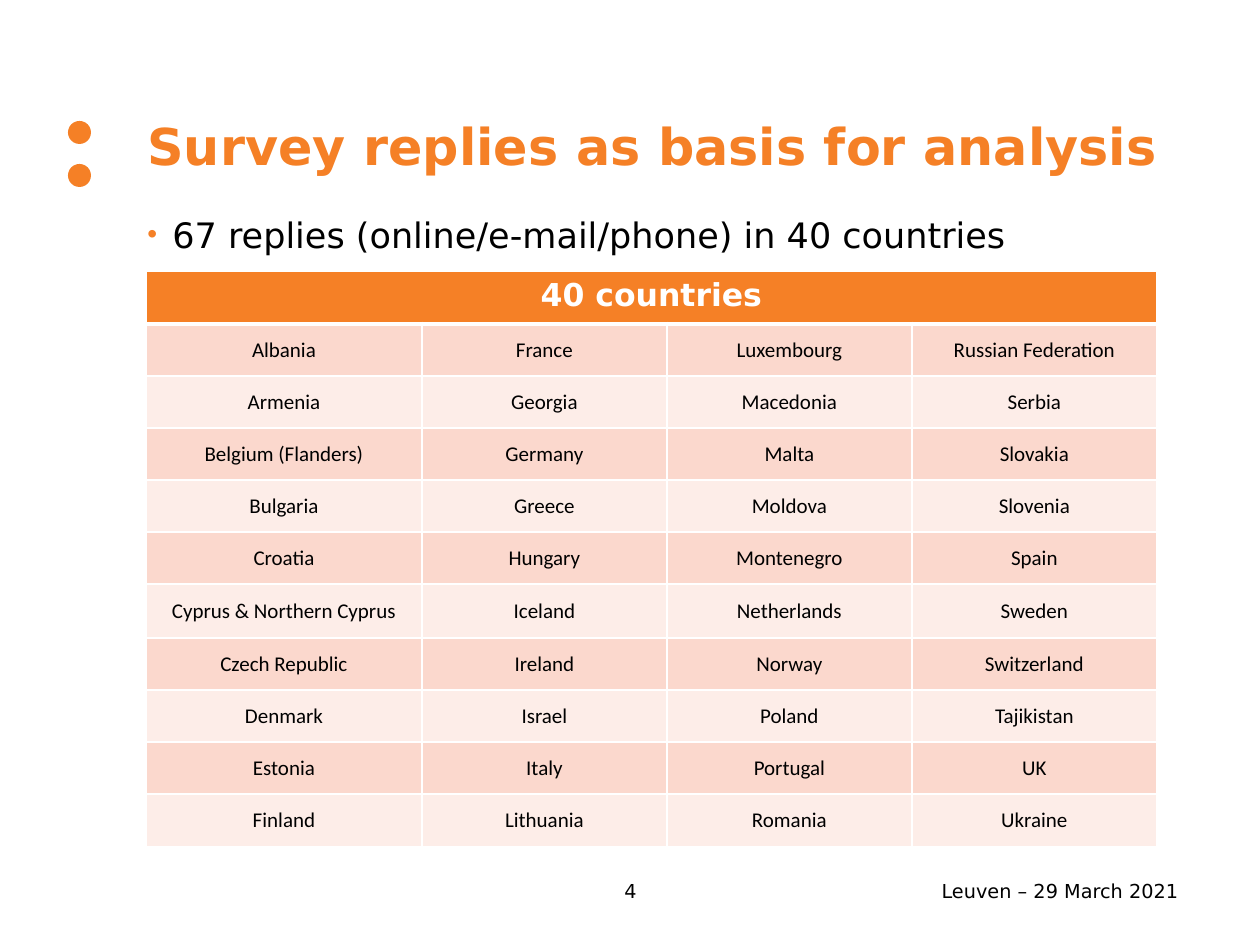
from lxml.etree import SubElement
from pptx import Presentation
from pptx.dml.color import RGBColor
from pptx.enum.shapes import MSO_SHAPE
from pptx.enum.text import MSO_ANCHOR, PP_ALIGN
from pptx.oxml.ns import qn
from pptx.util import Pt

EMU_PER_PX = 914400 // 126
COLORS = {
    "orange": "F58026",
    "white": "FFFFFF",
    "black": "000000",
    "odd_row": "FBD8CD",
    "even_row": "FDEDE8",
}
HEADING_FONT = "DejaVu Sans"
CELL_FONT = "Calibri"

COUNTRY_COLUMNS = [
    ["Albania", "Armenia", "Belgium (Flanders)", "Bulgaria", "Croatia",
     "Cyprus & Northern Cyprus", "Czech Republic", "Denmark", "Estonia", "Finland"],
    ["France", "Georgia", "Germany", "Greece", "Hungary",
     "Iceland", "Ireland", "Israel", "Italy", "Lithuania"],
    ["Luxembourg", "Macedonia", "Malta", "Moldova", "Montenegro",
     "Netherlands", "Norway", "Poland", "Portugal", "Romania"],
    ["Russian Federation", "Serbia", "Slovakia", "Slovenia", "Spain",
     "Sweden", "Switzerland", "Tajikistan", "UK", "Ukraine"],
]
COLUMN_WIDTHS = [276, 245, 245, 245]
ROW_HEIGHTS = [53] + [52] * 5 + [54] + [52] * 3 + [53]


def px(length):
    return length * EMU_PER_PX


def rgb(name):
    return RGBColor.from_string(COLORS[name])


def style_paragraph(para, size, color="black", name=HEADING_FONT, bold=False,
                    align=PP_ALIGN.LEFT):
    para.alignment = align
    para.font.name = name
    para.font.size = Pt(size)
    para.font.bold = bold
    para.font.color.rgb = rgb(color)


def add_text(page, text, left, top, width, height, size,
             anchor=MSO_ANCHOR.MIDDLE, bullet=False, **style):
    box = page.shapes.add_textbox(px(left), px(top), px(width), px(height))
    frame = box.text_frame
    frame.word_wrap = True
    frame.vertical_anchor = anchor
    para = frame.paragraphs[0]
    para.text = text
    if bullet:
        add_bullet(para)
    style_paragraph(para, size, **style)


def add_bullet(para):
    properties = para._p.get_or_add_pPr()
    properties.set("marL", str(px(25)))
    properties.set("indent", str(px(-25)))
    color = SubElement(properties, qn("a:buClr"))
    SubElement(color, qn("a:srgbClr"), val=COLORS["orange"])
    SubElement(properties, qn("a:buSzPct"), val="80000")
    SubElement(properties, qn("a:buFont"), typeface="Arial")
    SubElement(properties, qn("a:buChar"), char="•")


def add_dot(page, left, top, diameter):
    dot = page.shapes.add_shape(
        MSO_SHAPE.OVAL, px(left), px(top), px(diameter), px(diameter))
    dot.shadow.inherit = False
    dot.fill.solid()
    dot.fill.fore_color.rgb = rgb("orange")
    dot.line.fill.background()


def set_borders(cell, top=1, bottom=1):
    """Draw white borders; call before the cell's fill is set."""
    properties = cell._tc.get_or_add_tcPr()
    for side, points in (("L", 1), ("R", 1), ("T", top), ("B", bottom)):
        line = SubElement(properties, qn(f"a:ln{side}"), w=str(Pt(points)))
        fill = SubElement(line, qn("a:solidFill"))
        SubElement(fill, qn("a:srgbClr"), val=COLORS["white"])


def fill_cell(cell, color):
    cell.fill.solid()
    cell.fill.fore_color.rgb = rgb(color)


def add_header_row(table):
    for column in range(len(COLUMN_WIDTHS)):
        cell = table.cell(0, column)
        set_borders(cell, bottom=3)
        fill_cell(cell, "orange")
    header = table.cell(0, 0)
    header.merge(table.cell(0, len(COLUMN_WIDTHS) - 1))
    header.text = "40 countries"
    style_paragraph(header.text_frame.paragraphs[0], 18, "white", bold=True,
                    align=PP_ALIGN.CENTER)


def add_country(cell, country, row):
    set_borders(cell, top=3 if row == 1 else 1)
    fill_cell(cell, "odd_row" if row % 2 else "even_row")
    cell.vertical_anchor = MSO_ANCHOR.MIDDLE
    cell.margin_left = cell.margin_right = cell.margin_top = px(1)
    cell.margin_bottom = 0
    cell.text = country
    style_paragraph(cell.text_frame.paragraphs[0], 12, name=CELL_FONT,
                    align=PP_ALIGN.CENTER)


def add_country_table(page, left, top):
    table = page.shapes.add_table(
        len(ROW_HEIGHTS), len(COLUMN_WIDTHS), px(left), px(top),
        px(sum(COLUMN_WIDTHS)), px(sum(ROW_HEIGHTS))).table
    for column, width in zip(table.columns, COLUMN_WIDTHS):
        column.width = px(width)
    for row, height in zip(table.rows, ROW_HEIGHTS):
        row.height = px(height)
    add_header_row(table)
    for column, countries in enumerate(COUNTRY_COLUMNS):
        for row, country in enumerate(countries, start=1):
            add_country(table.cell(row, column), country, row)


def main():
    deck = Presentation()
    deck.slide_width = px(1260)
    deck.slide_height = px(945)
    page = deck.slides.add_slide(deck.slide_layouts[6])

    for top in (121, 164):
        add_dot(page, 68, top, 23)
    add_text(page, "Survey replies as basis for analysis", 135, 67, 1055, 157, 29,
             color="orange", bold=True)
    add_text(page, "67 replies (online/e-mail/phone) in 40 countries",
             135, 207, 1010, 197, 20, anchor=MSO_ANCHOR.TOP, bullet=True)
    add_country_table(page, 146, 271)
    add_text(page, "Leuven – 29 March 2021", 784, 866, 407, 50, 11,
             align=PP_ALIGN.RIGHT)
    add_text(page, "4", 543, 866, 175, 50, 11, align=PP_ALIGN.CENTER)

    deck.save("out.pptx")


if __name__ == "__main__":
    main()
